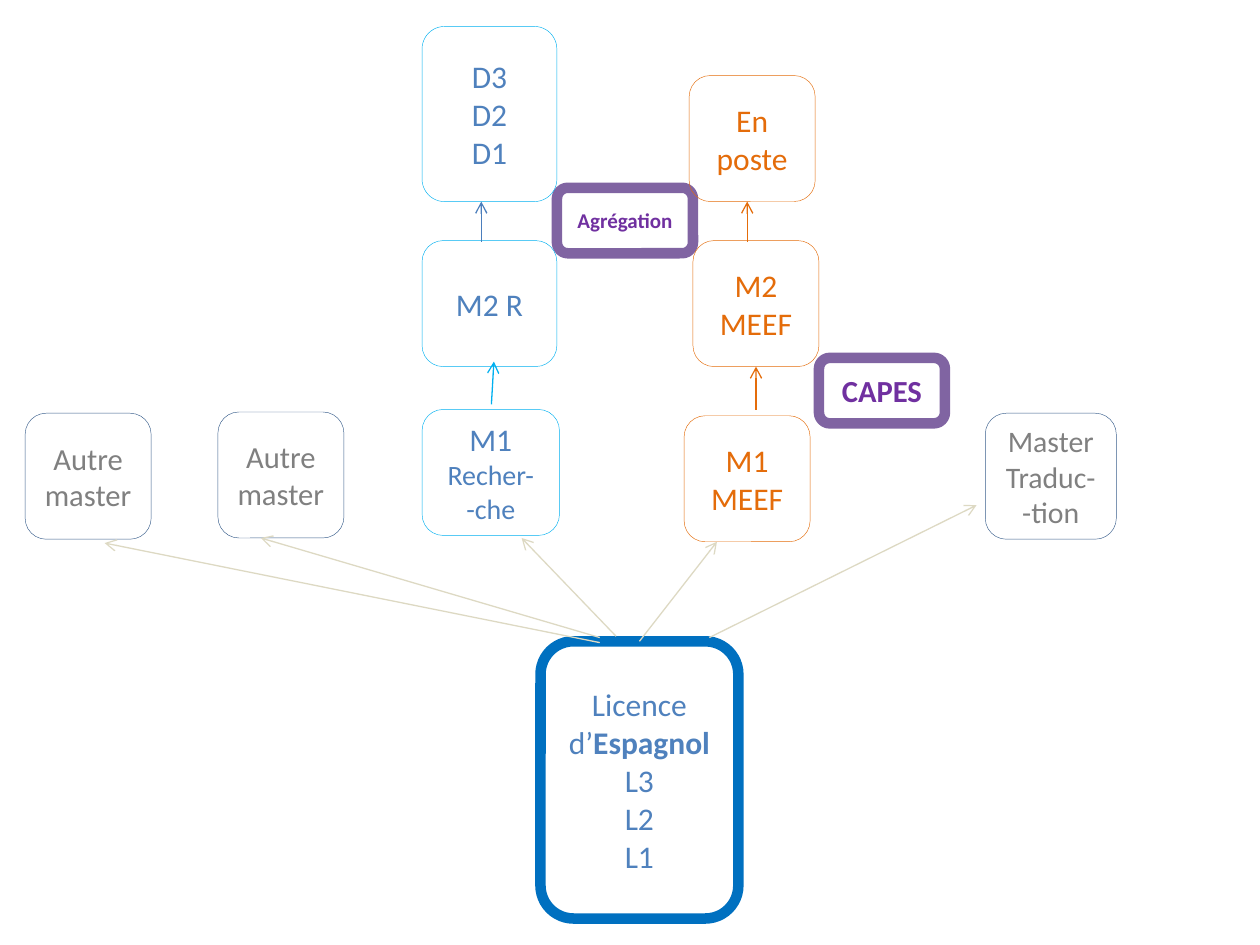
from dataclasses import dataclass
from typing import Any

from lxml.etree import SubElement
from pptx import Presentation
from pptx.dml.color import RGBColor
from pptx.enum.shapes import MSO_CONNECTOR, MSO_SHAPE
from pptx.enum.text import MSO_ANCHOR, PP_ALIGN
from pptx.oxml.ns import qn
from pptx.util import Inches, Pt

COLUMNS, ROWS = 10, 7.5
BLUE, ORANGE, GREY, PURPLE = "4F81BD", "E46C0A", "808080", "7030A0"
SKY, SLATE, VIOLET, SAND = "00B0F0", "3A5F8C", "8064A2", "DDD9C3"


def rgb(value):
    return RGBColor.from_string(value)


def write_text(frame, paragraphs, font="Calibri", size=18, color=BLUE, bold=False):
    """Each paragraph is a string or a list of (text, own format) runs."""
    frame.word_wrap = True
    frame.vertical_anchor = MSO_ANCHOR.MIDDLE
    for index, content in enumerate(paragraphs):
        paragraph = frame.paragraphs[0] if index == 0 else frame.add_paragraph()
        paragraph.alignment = PP_ALIGN.CENTER
        runs = [(content, {})] if isinstance(content, str) else content
        for words, own in runs:
            for number, line in enumerate(words.splitlines()):
                if number:
                    paragraph.add_line_break()
                run = paragraph.add_run()
                run.text = line
                run.font.name = font
                run.font.size = Pt(own.get("size", size))
                run.font.bold = own.get("bold", bold)
                run.font.color.rgb = rgb(color)


@dataclass
class Diagram:
    slide: Any
    column: int
    row: int
    thin: float = 0.25
    thick: float = 6
    arrow_width: float = 0.75

    def place(self, x, y):
        return round(x * self.column), round(y * self.row)

    def box(self, x, y, width, height, paragraphs, outline, weight=None, **text_format):
        shape = self.slide.shapes.add_shape(
            MSO_SHAPE.ROUNDED_RECTANGLE, *self.place(x, y), *self.place(width, height))
        shape.shadow.inherit = False
        shape.fill.background()
        shape.line.color.rgb = rgb(outline)
        shape.line.width = Pt(weight or self.thin)
        write_text(shape.text_frame, paragraphs, **text_format)
        return shape

    def exam(self, x, y, width, name, size):
        return self.box(x, y, width, 0.52, [name], VIOLET, self.thick,
                        size=size, color=PURPLE, bold=True)

    def arrow(self, start, end, color):
        line = self.slide.shapes.add_connector(
            MSO_CONNECTOR.STRAIGHT, *self.place(*start), *self.place(*end))
        line.line.color.rgb = rgb(color)
        line.line.width = Pt(self.arrow_width)
        SubElement(line.line._get_or_add_ln(), qn("a:tailEnd"), type="arrow")
        SubElement(line._element.spPr, qn("a:effectLst"))
        return line


def main():
    deck = Presentation()
    deck.slide_width, deck.slide_height = Inches(COLUMNS), Inches(ROWS)
    slide = deck.slides.add_slide(deck.slide_layouts[6])
    diagram = Diagram(slide, deck.slide_width // COLUMNS, round(deck.slide_height / ROWS))

    # Competitive exams, behind the degrees
    diagram.exam(4.42, 1.49, 1.08, "Agrégation", 12)
    diagram.exam(6.5, 2.84, 1, "CAPES", 17.5)

    # Research path
    small = {"size": 16}
    diagram.box(3.35, 3.25, 1.09, 1, ["M1", [("Recher-", small)], [("-che", small)]], SKY)
    diagram.box(3.35, 1.91, 1.07, 1, ["M2 R"], SKY)
    diagram.box(3.35, 0.21, 1.07, 1.39, ["D3", "D2", "D1"], SKY)

    # Teaching path
    diagram.box(5.43, 3.3, 1, 1, ["M1 MEEF"], ORANGE, color=ORANGE)
    m2_meef = diagram.box(5.5, 1.91, 1, 1, ["M2 MEEF"], ORANGE, color=ORANGE)
    diagram.box(5.47, 0.6, 1, 1, ["En poste"], ORANGE, color=ORANGE)

    # Other masters
    for x, y in ((0.2, 3.28), (1.73, 3.27)):
        diagram.box(x, y, 1, 1, ["Autre master"], SLATE, size=17.5, color=GREY)
    diagram.box(7.82, 3.28, 1.04, 1, ["Master\nTraduc-\n-tion"], SLATE, size=17, color=GREY)

    # Bachelor's degree
    licence = diagram.box(
        4.29, 5.09, 1.57, 2.2,
        ["Licence", [("d’", {}), ("Espagnol", {"bold": True})], "L3", "L2", "L1"],
        "0070C0", diagram.thick)

    # Steps up each path
    diagram.arrow((3.9, 3.21), (3.92, 2.87), SKY)
    diagram.arrow((3.82, 1.92), (3.82, 1.6), "4B7EBC")
    diagram.arrow((5.93, 1.92), (5.93, 1.6), ORANGE)
    to_m2_meef = diagram.arrow((6, 3.25), (6, 2.91), ORANGE)
    to_m2_meef.end_connect(m2_meef, 2)

    # Ways on from the bachelor's degree
    for start, end in (((4.76, 5.1), (0.83, 4.31)),
                       ((4.76, 5.06), (2.07, 4.27)),
                       ((4.89, 5.05), (4.14, 4.27)),
                       ((5.63, 5.06), (7.75, 4.01))):
        diagram.arrow(start, end, SAND)
    to_m1_meef = diagram.arrow((5.08, 5.09), (5.69, 4.3), SAND)
    to_m1_meef.begin_connect(licence, 0)

    deck.save("out.pptx")


if __name__ == "__main__":
    main()
